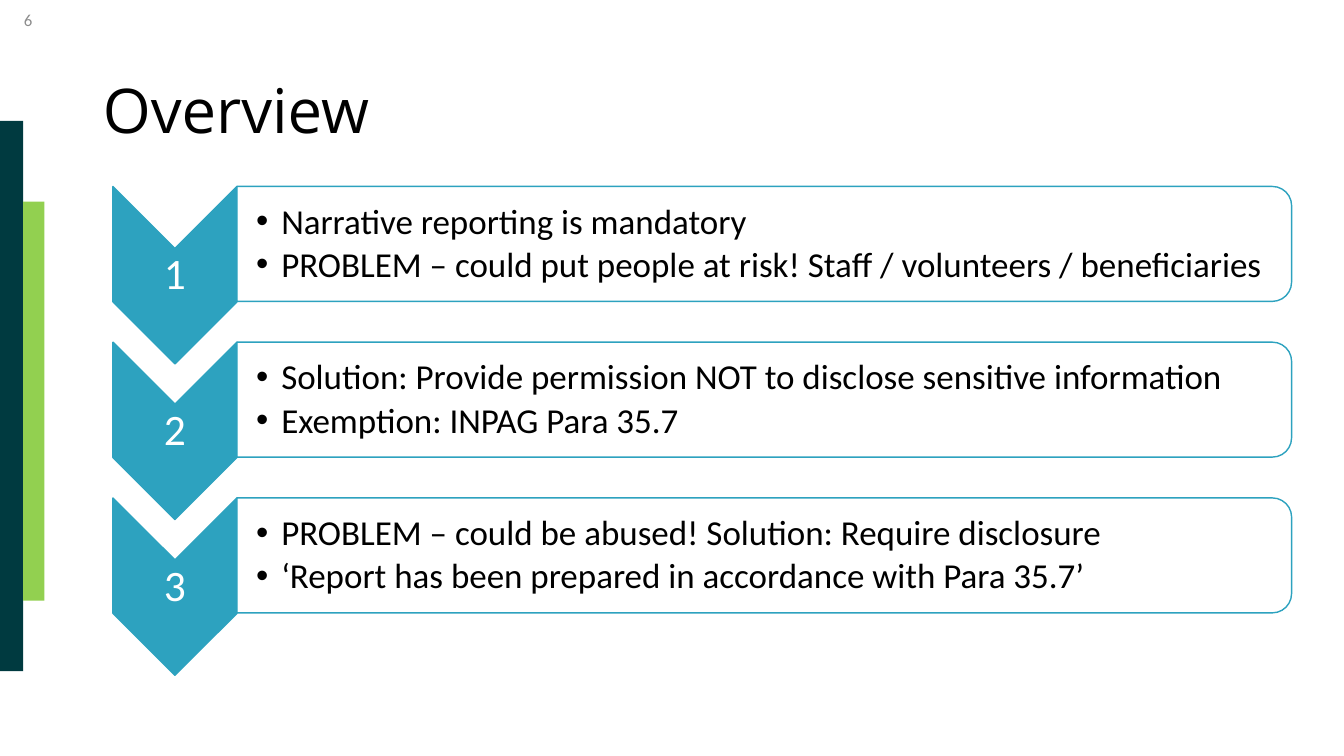
from dataclasses import dataclass

from lxml import etree
from pptx import Presentation
from pptx.dml.color import RGBColor
from pptx.enum.shapes import MSO_SHAPE
from pptx.enum.text import MSO_ANCHOR, MSO_AUTO_SIZE, PP_ALIGN
from pptx.oxml.ns import qn
from pptx.util import Inches, Pt

RECTANGLE = MSO_SHAPE.RECTANGLE
CHEVRON = MSO_SHAPE.CHEVRON
ROUNDED_PANEL = MSO_SHAPE.ROUND_2_SAME_RECTANGLE
MIDDLE = MSO_ANCHOR.MIDDLE
NO_AUTOFIT = MSO_AUTO_SIZE.NONE
LEFT, CENTER, RIGHT = PP_ALIGN.LEFT, PP_ALIGN.CENTER, PP_ALIGN.RIGHT


@dataclass(frozen=True)
class Theme:
    dark: str = "003A40"
    green: str = "92D050"
    blue: str = "2DA2BF"
    white: str = "FFFFFF"
    black: str = "000000"
    grey: str = "8C8C8C"
    title_font: str = "Open Sans"
    body_font: str = "Calibri"
    title_size: int = 44
    step_size: int = 31
    body_size: int = 25
    number_size: int = 12


THEME = Theme()
FIRST_TOP = 1.85
STEP_PITCH = 3.09 / 2
STEPS = [
    ["Narrative reporting is mandatory",
     "PROBLEM – could put people at risk! Staff / volunteers / beneficiaries"],
    ["Solution: Provide permission NOT to disclose sensitive information",
     "Exemption: INPAG Para 35.7"],
    ["PROBLEM – could be abused! Solution: Require disclosure",
     "‘Report has been prepared in accordance with Para 35.7’"],
]


def add_bullet(paragraph):
    properties = paragraph._p.get_or_add_pPr()
    properties.set("marL", str(Inches(0.25)))
    properties.set("indent", str(-Inches(0.25)))
    font = etree.SubElement(properties, qn("a:buFont"))
    font.set("typeface", "Arial")
    etree.SubElement(properties, qn("a:buChar")).set("char", "•")


def write_text(shape, lines, size, color, font=THEME.body_font, align=LEFT,
               spacing=0.9, after=0, bullets=False, insets=None):
    frame = shape.text_frame
    frame.word_wrap = True
    frame.auto_size = NO_AUTOFIT
    frame.vertical_anchor = MIDDLE
    if insets:
        (frame.margin_left, frame.margin_top,
         frame.margin_right, frame.margin_bottom) = map(Inches, insets)
    for index, line in enumerate(lines):
        paragraph = frame.add_paragraph() if index else frame.paragraphs[0]
        if bullets:
            add_bullet(paragraph)
        paragraph.alignment = align
        paragraph.line_spacing = spacing
        paragraph.space_before = Pt(0)
        paragraph.space_after = Pt(after)
        run = paragraph.add_run()
        run.text = line
        run.font.name = font
        run.font.size = Pt(size)
        run.font.color.rgb = RGBColor.from_string(color)


def add_text(slide, left, top, width, height, lines, **text_format):
    box = slide.shapes.add_textbox(
        Inches(left), Inches(top), Inches(width), Inches(height))
    write_text(box, lines, **text_format)


def add_block(slide, kind, left, top, width, height, fill, line=None, rotation=0):
    shape = slide.shapes.add_shape(
        kind, Inches(left), Inches(top), Inches(width), Inches(height))
    shape.shadow.inherit = False
    shape.rotation = rotation
    shape.fill.solid()
    shape.fill.fore_color.rgb = RGBColor.from_string(fill)
    if line:
        shape.line.color.rgb = RGBColor.from_string(line)
        shape.line.width = Pt(1)
    else:
        shape.line.fill.background()
    return shape


def add_turned_block(slide, kind, left, top, width, height, fill):
    shift = (width - height) / 2
    return add_block(slide, kind, left + shift, top - shift, height, width,
                     fill, line=THEME.blue, rotation=90)


def set_opacity(shape, percent):
    color = shape.fill._xPr.find(qn("a:solidFill"))[0]
    etree.SubElement(color, qn("a:alpha")).set("val", str(percent * 1000))


def add_step(slide, number, points):
    top = FIRST_TOP + (number - 1) * STEP_PITCH
    add_turned_block(slide, CHEVRON, 1.12, top, 1.23, 1.76, THEME.blue)
    add_text(slide, 1.12, top + 0.62, 1.23, 0.53, [str(number)],
             size=THEME.step_size, color=THEME.white, align=CENTER,
             after=10.85, insets=(0.02, 0.02, 0.02, 0.02))
    panel = add_turned_block(slide, ROUNDED_PANEL, 2.35, top, 10.46, 1.14, THEME.white)
    set_opacity(panel, 90)
    add_text(slide, 2.35, top + 0.06, 10.4, 1.03, points,
             size=THEME.body_size, color=THEME.black, after=3.75,
             bullets=True, insets=(0.19, 0.02, 0.02, 0.02))


def add_title(slide, text):
    title = slide.shapes.title
    title.left, title.top = Inches(0.92), Inches(0.4)
    title.width, title.height = Inches(11.5), Inches(1.45)
    write_text(title, [text], size=THEME.title_size, color=THEME.black,
               font=THEME.title_font)


def main():
    presentation = Presentation()
    presentation.slide_width = Inches(13.33)
    presentation.slide_height = Inches(7.5)
    slide = presentation.slides.add_slide(presentation.slide_layouts[5])
    add_block(slide, RECTANGLE, 0, 1.2, 0.23, 5.46, THEME.dark)
    add_block(slide, RECTANGLE, 0.23, 2, 0.21, 3.96, THEME.green)
    add_title(slide, "Overview")
    add_text(slide, 0, 0, 0.42, 0.4, ["6"], size=THEME.number_size,
             color=THEME.grey, align=RIGHT, spacing=1.0)
    for number, points in enumerate(STEPS, start=1):
        add_step(slide, number, points)
    presentation.save("out.pptx")


if __name__ == "__main__":
    main()
